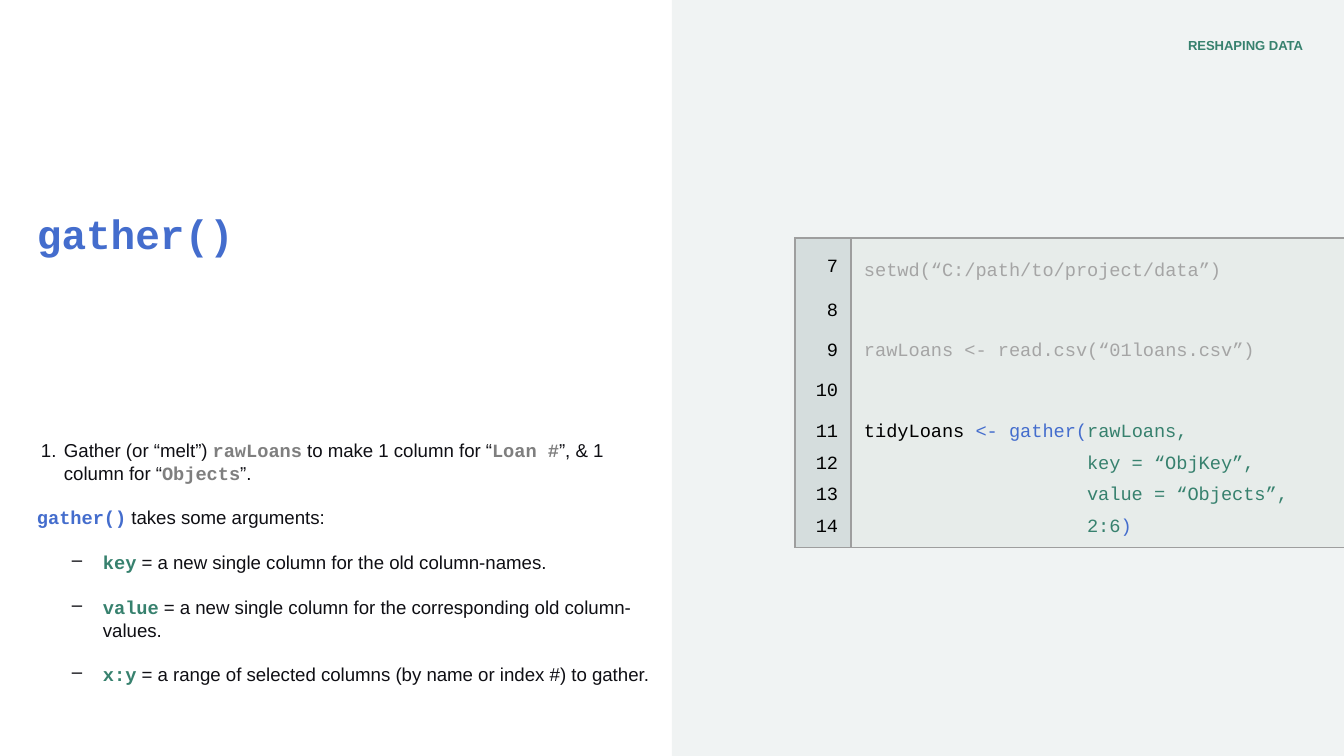
import pptx
import pptx.util
import pptx.dml.color
import pptx.enum.shapes
import pptx.enum.text
import pptx.oxml.ns
from lxml import etree

PX = 914400 / 134.4
ALIGN = pptx.enum.text.PP_ALIGN
ANCHOR = pptx.enum.text.MSO_ANCHOR

THEME = {
    "sans": "Arial", "mono": "Courier New",
    "title": 22, "body": 10, "label": 7, "border": 0.75,
    "ink": "0F0F14", "black": "000000", "blue": "446DCD", "green": "37816E",
    "gray": "7F7F7F", "faded": "A5A5A5", "rule": "9E9E9E",
    "panel": "F0F3F3", "gutter": "D5DDDD", "code": "E7ECEA",
}

TITLE = "gather()"
SECTION = "RESHAPING DATA"
NOTES = [
    ("number", [("Gather (or “melt”) ", "ink"), ("rawLoans", "gray"),
                (" to make 1 column for “", "ink"), ("Loan #", "gray"),
                ("”, & 1 column for “", "ink"), ("Objects", "gray"), ("”.", "ink")]),
    ("plain", [("gather()", "blue"), (" takes some arguments:", "ink")]),
    ("dash", [("key", "green"), (" = a new single column for the old column-names.", "ink")]),
    ("dash", [("value", "green"),
              (" = a new single column for the corresponding old column-values.", "ink")]),
    ("dash", [("x:y", "green"),
              (" = a range of selected columns (by name or index #) to gather.", "ink")]),
]
BULLETS = {
    "number": (27, -23, "buAutoNum", {"type": "arabicPeriod"}),
    "dash": (66, -31, "buChar", {"char": "–"}),
}
FIRST_LINE = 7
CODE = [
    [("setwd(“C:/path/to/project/data”)", "faded")],
    [],
    [("rawLoans <- read.csv(“01loans.csv”)", "faded")],
    [],
    [("tidyLoans ", "black"), ("<- gather(", "blue"), ("rawLoans,", "green")],
    [("                    ", "black"), ("key = “ObjKey”,", "green")],
    [("                    ", "black"), ("value = “Objects”,", "green")],
    [("                    ", "black"), ("2:6", "green"), (")", "blue")],
]
COLUMNS = (56, 616)
FIRST_ROW, ROW = 52, 32
PAD, FIRST_PADS = 13, (27, 34)


def px(length):
    return pptx.util.Emu(round(length * PX))


def color(name):
    return pptx.dml.color.RGBColor.from_string(THEME[name])


def add_child(parent, tag, **attributes):
    return etree.SubElement(parent, pptx.oxml.ns.qn("a:" + tag), attributes)


def write(para, spans, font, size, bold=False):
    for text, tint in spans:
        span = para.add_run()
        span.text = text
        span.font.name = THEME[font]
        span.font.size = pptx.util.Pt(THEME[size])
        span.font.bold = bold
        span.font.color.rgb = color(tint)


def set_frame(frame, insets, anchor=ANCHOR.TOP):
    frame.word_wrap = True
    frame.auto_size = pptx.enum.text.MSO_AUTO_SIZE.NONE
    frame.vertical_anchor = anchor
    (frame.margin_left, frame.margin_top,
     frame.margin_right, frame.margin_bottom) = map(px, insets)
    return frame


def add_text(page, bounds, insets):
    box = page.shapes.add_textbox(*map(px, bounds))
    return set_frame(box.text_frame, insets)


def add_bullet(para, kind):
    margin, indent, tag, attributes = BULLETS[kind]
    props = para._p.get_or_add_pPr()
    props.set("marL", str(px(margin)))
    props.set("indent", str(px(indent)))
    add_child(add_child(props, "buClr"), "srgbClr", val=THEME["ink"])
    add_child(props, tag, **attributes)


def set_borders(cell, sides):
    props = cell._tc.get_or_add_tcPr()
    for side in "LRTB":
        line = add_child(props, "ln" + side, w=str(pptx.util.Pt(THEME["border"])))
        if side in sides:
            add_child(add_child(line, "solidFill"), "srgbClr", val=THEME["rule"])
        else:
            add_child(line, "noFill")


def add_code(page):
    height = FIRST_ROW + ROW * (len(CODE) - 1)
    frame = page.shapes.add_table(len(CODE), len(COLUMNS), px(795), px(238),
                                  px(sum(COLUMNS)), px(height))
    table = frame.table
    table.first_row = table.horz_banding = False
    for column, width in zip(table.columns, COLUMNS):
        column.width = px(width)
    for index, spans in enumerate(CODE):
        table.rows[index].height = px(ROW if index else FIRST_ROW)
        sides = "LR" + "T" * (index == 0) + "B" * (index == len(CODE) - 1)
        number = [(str(FIRST_LINE + index), "black")]
        styles = ((number, "gutter", ALIGN.RIGHT), (spans, "code", ALIGN.LEFT))
        for place, (content, fill, align) in enumerate(styles):
            cell = table.cell(index, place)
            set_borders(cell, sides)
            cell.fill.solid()
            cell.fill.fore_color.rgb = color(fill)
            cell.vertical_anchor = ANCHOR.MIDDLE
            cell.margin_left = cell.margin_right = cell.margin_bottom = px(PAD)
            cell.margin_top = px(PAD if index else FIRST_PADS[place])
            para = cell.text_frame.paragraphs[0]
            para.alignment = align
            para.line_spacing = 0.25
            write(para, content, "mono", "body")
            if not content:
                para._p.get_or_add_endParaRPr().set("sz", str(THEME["body"] * 100))


def main():
    deck = pptx.Presentation()
    deck.slide_width, deck.slide_height = px(1344), px(756)
    page = deck.slides.add_slide(deck.slide_layouts[5])

    panel = page.shapes.add_shape(pptx.enum.shapes.MSO_SHAPE.RECTANGLE,
                                  px(672), 0, px(672), px(756))
    panel.shadow.inherit = False
    panel.fill.solid()
    panel.fill.fore_color.rgb = color("panel")
    panel.line.fill.background()

    title = page.shapes.title
    title.left, title.top, title.width, title.height = map(px, (37, 121, 317, 150))
    frame = set_frame(title.text_frame, (0, 13, 13, 13), ANCHOR.BOTTOM)
    para = frame.paragraphs[0]
    para.alignment = ALIGN.LEFT
    para.line_spacing = 0.9
    write(para, [(TITLE, "blue")], "mono", "title", True)

    notes = add_text(page, (37, 426, 635, 302), (0, 13, 13, 13))
    for index, (kind, spans) in enumerate(NOTES):
        para = notes.add_paragraph() if index else notes.paragraphs[0]
        if index:
            para.space_before = pptx.util.Pt(12)
        if kind in BULLETS:
            add_bullet(para, kind)
        for text, tint in spans:
            plain = tint == "ink"
            write(para, [(text, tint)], "sans" if plain else "mono", "body", not plain)

    section = add_text(page, (1017, 39, 286, 22), (0, 0, 0, 13))
    para = section.paragraphs[0]
    para.alignment = ALIGN.RIGHT
    para.line_spacing = 0.9
    write(para, [(SECTION, "green")], "sans", "label", True)

    add_code(page)
    deck.save("out.pptx")


if __name__ == "__main__":
    main()
